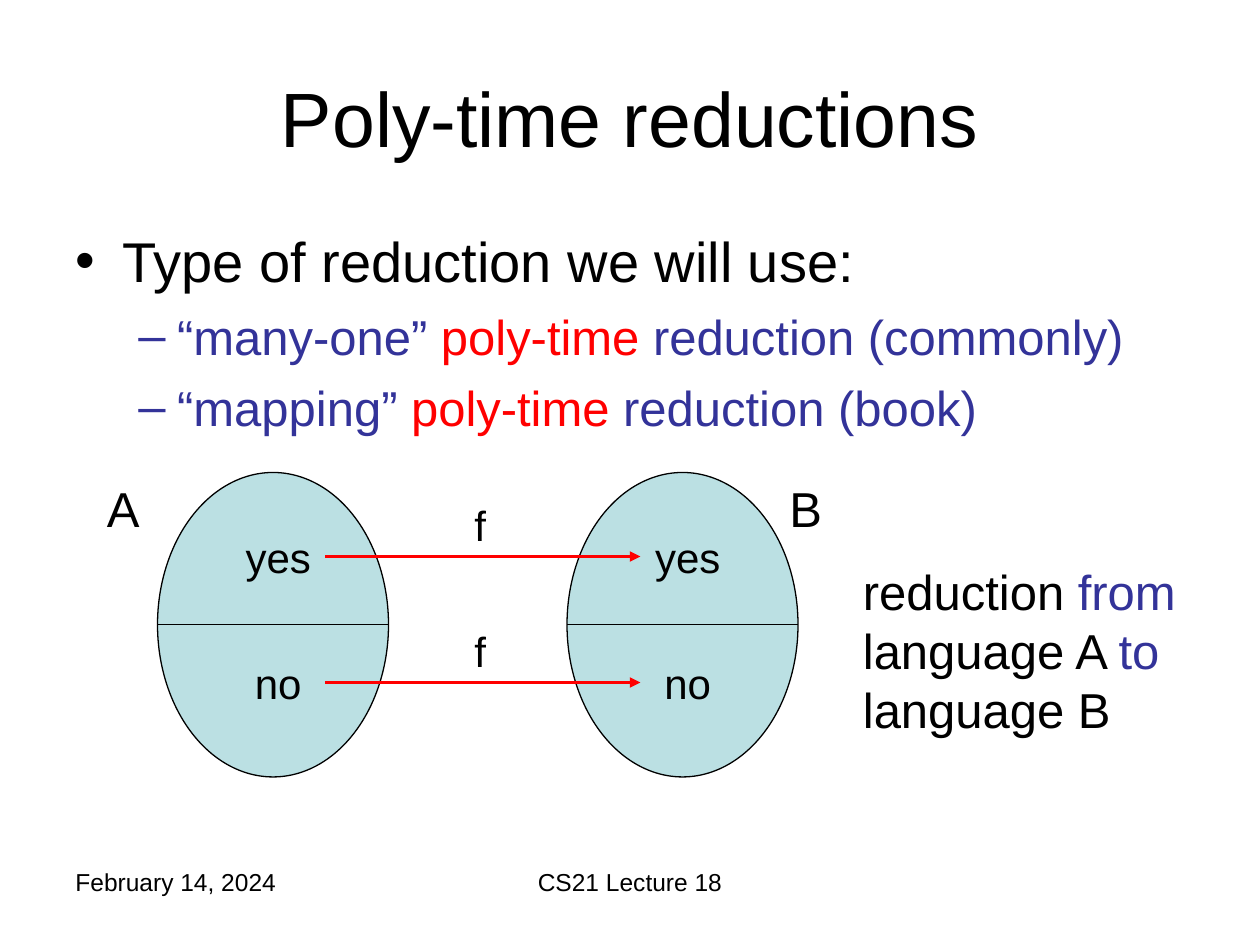
"""Build the slide on poly-time reductions between two languages."""
from typing import NamedTuple

from lxml import etree
from pptx import Presentation
from pptx.dml.color import RGBColor
from pptx.enum.shapes import MSO_CONNECTOR, MSO_SHAPE
from pptx.enum.text import MSO_ANCHOR, PP_ALIGN
from pptx.oxml.ns import qn
from pptx.util import Emu, Pt

STRAIGHT, OVAL = MSO_CONNECTOR.STRAIGHT, MSO_SHAPE.OVAL
MIDDLE = MSO_ANCHOR.MIDDLE
LEFT, CENTER = PP_ALIGN.LEFT, PP_ALIGN.CENTER
PX = 914400 // 120
BLACK, NAVY, RED, AQUA = "000000", "333399", "FF0000", "BBE0E3"
FONT = "Arial"
OVAL_WIDTH, OVAL_HEIGHT = 220, 290


class Box(NamedTuple):
    left: int
    top: int
    width: int
    height: int


class Piece(NamedTuple):
    text: str
    color: str = BLACK


class Bullet(NamedTuple):
    level: int
    mark: str
    margin: int
    hang: int
    size: int
    pieces: list[Piece]


class Language(NamedTuple):
    label: str
    label_left: int
    left: int


class Answer(NamedTuple):
    text: str
    top: int


BULLETS = [
    Bullet(0, "•", 45, 45, 32, [Piece("Type of reduction we will use:")]),
    Bullet(1, "–", 97, 37, 28, [Piece("“many-one” ", NAVY), Piece("poly-time", RED),
                                Piece(" reduction (commonly)", NAVY)]),
    Bullet(1, "–", 97, 37, 28, [Piece("“mapping” ", NAVY), Piece("poly-time ", RED),
                                Piece("reduction (book)", NAVY)]),
]
LANGUAGES = [Language("A", 90, 150), Language("B", 740, 540)]
ANSWERS = [Answer("yes", 500), Answer("no", 620)]
SUMMARY = [Piece("reduction "), Piece("from", NAVY), Piece(" language A "),
           Piece("to", NAVY), Piece(" language B")]


def px(length: int) -> Emu:
    """Turn pixels into EMU."""
    return Emu(length * PX)


def rgb(color: str) -> RGBColor:
    """Turn a hex string into a colour."""
    return RGBColor.from_string(color)


def place(shape, box: Box) -> None:
    """Move and size a shape."""
    shape.left, shape.top, shape.width, shape.height = map(px, box)


def add_runs(paragraph, pieces: list[Piece], size: int) -> None:
    """Append each piece as a formatted run."""
    for piece in pieces:
        run = paragraph.add_run()
        run.text = piece.text
        run.font.name, run.font.size = FONT, Pt(size)
        run.font.color.rgb = rgb(piece.color)


def add_text(slide, box: Box, pieces: list[Piece], size: int, align=LEFT) -> None:
    """Add a wrapping one-paragraph text box."""
    frame = slide.shapes.add_textbox(*map(px, box)).text_frame
    frame.word_wrap = True
    frame.paragraphs[0].alignment = align
    add_runs(frame.paragraphs[0], pieces, size)


def add_title(slide, text: str) -> None:
    """Format and fill the title placeholder."""
    title = slide.shapes.title
    place(title, Box(60, 36, 1080, 150))
    title.text_frame.vertical_anchor = MIDDLE
    title.text_frame.paragraphs[0].alignment = CENTER
    add_runs(title.text_frame.paragraphs[0], [Piece(text)], 44)


def add_bullets(slide, box: Box, bullets: list[Bullet]) -> None:
    """Add the bulleted list."""
    frame = slide.shapes.add_textbox(*map(px, box)).text_frame
    frame.word_wrap = True
    for index, bullet in enumerate(bullets):
        paragraph = frame.add_paragraph() if index else frame.paragraphs[0]
        paragraph.level = bullet.level
        paragraph.space_before = Pt(7)
        add_runs(paragraph, bullet.pieces, bullet.size)
        properties = paragraph._p.get_or_add_pPr()
        properties.set("marL", str(px(bullet.margin)))
        properties.set("indent", str(-px(bullet.hang)))
        etree.SubElement(properties, qn("a:buFont"), typeface=FONT)
        etree.SubElement(properties, qn("a:buChar"), char=bullet.mark)


def add_line(slide, left: int, right: int, y: int, color: str, weight: float,
             arrow: bool = False) -> None:
    """Add a horizontal line, optionally with an arrowhead on the right."""
    line = slide.shapes.add_connector(STRAIGHT, px(left), px(y), px(right), px(y))
    line.line.color.rgb = rgb(color)
    line.line.width = Pt(weight)
    if arrow:
        etree.SubElement(line.line._get_or_add_ln(), qn("a:tailEnd"), type="triangle")
    etree.SubElement(line._element.spPr, qn("a:effectLst"))


def add_language(slide, language: Language) -> None:
    """Add a language as an oval split into yes and no halves."""
    top = 450
    oval = slide.shapes.add_shape(
        OVAL, *map(px, Box(language.left, top, OVAL_WIDTH, OVAL_HEIGHT)))
    oval.shadow.inherit = False
    oval.fill.solid()
    oval.fill.fore_color.rgb = rgb(AQUA)
    oval.line.color.rgb = rgb(BLACK)
    oval.line.width = Pt(0.75)
    add_line(slide, language.left, language.left + OVAL_WIDTH, top + OVAL_HEIGHT // 2,
             BLACK, 0.75)
    for answer in ANSWERS:
        add_text(slide, Box(language.left + 70, answer.top, 90, 60),
                 [Piece(answer.text)], 24, CENTER)
    add_text(slide, Box(language.label_left, top, 70, 68), [Piece(language.label)], 28)


def main() -> None:
    """Build and save the slide."""
    deck = Presentation()
    deck.slide_width, deck.slide_height = px(1200), px(900)
    slide = deck.slides.add_slide(deck.slide_layouts.get_by_name("Title Only"))
    add_title(slide, "Poly-time reductions")
    add_bullets(slide, Box(60, 210, 1080, 220), BULLETS)
    for language in LANGUAGES:
        add_language(slide, language)
    for answer in ANSWERS:
        add_line(slide, 310, 610, answer.top + 30, RED, 2, arrow=True)
        add_text(slide, Box(440, answer.top - 30, 70, 60), [Piece("f")], 24)
    add_text(slide, Box(810, 529, 330, 180), SUMMARY, 28)
    add_text(slide, Box(60, 820, 280, 62), [Piece("February 14, 2024")], 14)
    add_text(slide, Box(410, 820, 380, 62), [Piece("CS21 Lecture 18")], 14, CENTER)
    deck.save("out.pptx")


if __name__ == "__main__":
    main()
